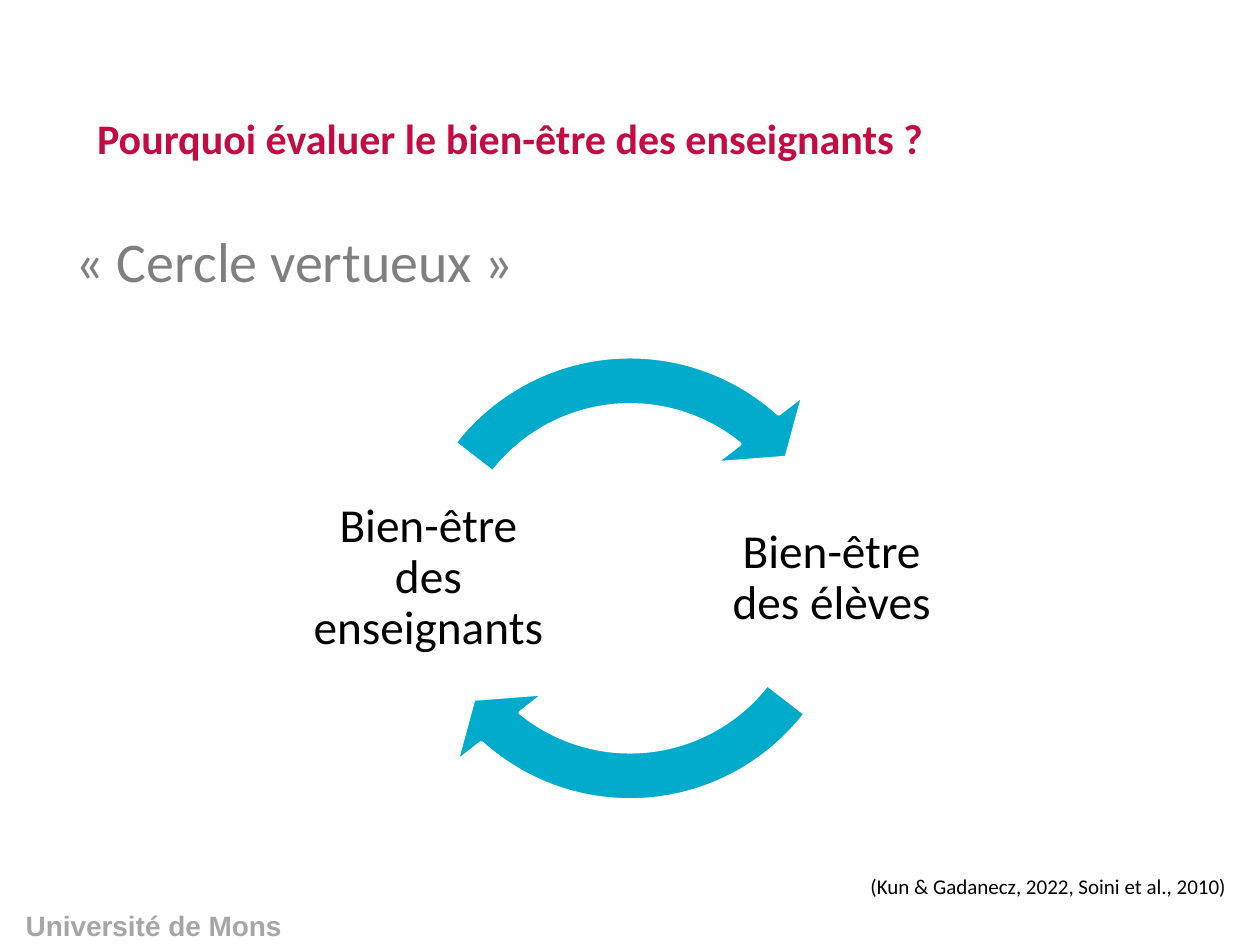
"""Build the slide on the virtuous circle of teacher and pupil well-being."""
from dataclasses import dataclass

from lxml import etree
from pptx import Presentation
from pptx import util as u
from pptx.dml.color import RGBColor
from pptx.enum import shapes, text
from pptx.oxml.ns import qn


@dataclass(frozen=True)
class Style:
    size: float
    color: str
    font: str = "Calibri"
    bold: bool = False


@dataclass(frozen=True)
class Theme:
    title: Style = Style(24, "C40C42", bold=True)
    body: Style = Style(32, "808080")
    label: Style = Style(27, "000000")
    source: Style = Style(12, "000000")
    footer: Style = Style(16, "A6A6A6", "Arial", True)
    arrow: str = "00ABCC"
    outline: str = "FFFFFF"


@dataclass(frozen=True)
class Box:
    left: float
    top: float
    width: float
    height: float


@dataclass(frozen=True)
class Stage:
    label: str
    left: float
    turn: float


THEME = Theme()
LEFT, CENTER = text.PP_ALIGN.LEFT, text.PP_ALIGN.CENTER
TOP, MIDDLE = text.MSO_ANCHOR.TOP, text.MSO_ANCHOR.MIDDLE
HALF_TURN = 108
RING = Box(2.99, 2.58, 4.02, 4.02)
LABEL_TOP, LABEL_SIDE = 3.61, 1.96
STAGES = (
    Stage("Bien-être des élèves", 5.62, 0),
    Stage("Bien-être des enseignants", 2.42, HALF_TURN),
)


def place(sp, box: Box) -> None:
    """Move and size a shape."""
    sp.left, sp.top = u.Inches(box.left), u.Inches(box.top)
    sp.width, sp.height = u.Inches(box.width), u.Inches(box.height)


def write(sp, content: str, style: Style, align=LEFT, anchor=TOP):
    """Fill a shape with one formatted paragraph and return the paragraph."""
    tf = sp.text_frame
    tf.text = content
    tf.word_wrap = True
    tf.vertical_anchor = anchor
    p = tf.paragraphs[0]
    p.alignment = align
    p.space_before = u.Pt(0)
    r = p.runs[0]
    r.font.name, r.font.size, r.font.bold = style.font, u.Pt(style.size), style.bold
    r.font.color.rgb = RGBColor.from_string(style.color)
    return p


def add_text(s, box: Box, content: str, style: Style, align=LEFT, anchor=TOP):
    """Add a text box and return it."""
    sp = s.shapes.add_textbox(0, 0, 0, 0)
    place(sp, box)
    write(sp, content, style, align, anchor)
    return sp


def remove_bullet(p) -> None:
    """Turn off the bullet and indent of a paragraph."""
    props = p._p.get_or_add_pPr()
    props.set("marL", "0")
    props.set("indent", "0")
    etree.SubElement(props, qn("a:buNone"))


def add_stage(s, stage: Stage) -> None:
    """Add a label of the circle and the arrow that goes with it."""
    box = Box(stage.left, LABEL_TOP, LABEL_SIDE, LABEL_SIDE)
    sp = add_text(s, box, stage.label, THEME.label, CENTER, MIDDLE)
    tf = sp.text_frame
    tf.margin_left = tf.margin_right = tf.margin_top = tf.margin_bottom = u.Inches(0.04)
    tf.paragraphs[0].line_spacing = 0.9

    arrow = s.shapes.add_shape(shapes.MSO_SHAPE.CIRCULAR_ARROW, 0, 0, 0, 0)
    place(arrow, RING)
    values = (0.095, 6.85, 78.53 + stage.turn, 22.63 + stage.turn, 0.11)
    for i, value in enumerate(values):
        arrow.adjustments[i] = value
    arrow.shadow.inherit = False
    arrow.fill.solid()
    arrow.fill.fore_color.rgb = RGBColor.from_string(THEME.arrow)
    arrow.line.color.rgb = RGBColor.from_string(THEME.outline)
    arrow.line.width = u.Pt(2)


def main() -> None:
    """Create the presentation and save it."""
    prs = Presentation()
    prs.slide_width, prs.slide_height = u.Inches(10), u.Inches(7.5)
    s = prs.slides.add_slide(prs.slide_layouts[1])
    add_text(s, Box(0, 7.16, 2.44, 0.37), "Université de Mons", THEME.footer, CENTER)

    title, body = s.shapes.title, s.placeholders[1]
    place(title, Box(0.67, 0.47, 9, 1.25))
    write(title, "Pourquoi évaluer le bien-être des enseignants ?", THEME.title, anchor=MIDDLE)
    place(body, Box(0.5, 1.75, 9, 4.95))
    remove_bullet(write(body, "«\u00a0Cercle vertueux\u00a0»", THEME.body))

    for stage in STAGES:
        add_stage(s, stage)
    add_text(s, Box(6.81, 6.88, 3.19, 0.3),
             "(Kun & Gadanecz, 2022, Soini et al., 2010)", THEME.source)
    prs.save("out.pptx")


if __name__ == "__main__":
    main()
